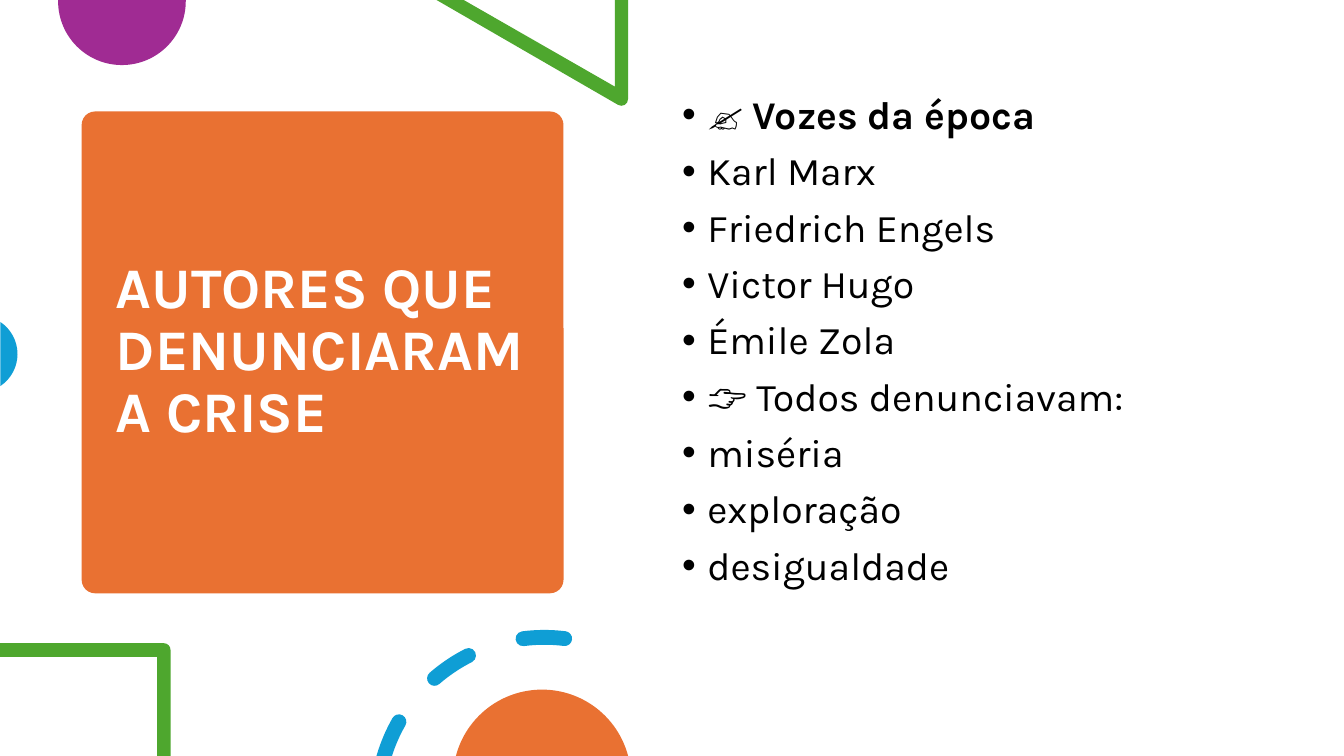
from math import ceil, cos, radians, sin, tan

from lxml.etree import SubElement
from pptx import Presentation
from pptx.dml.color import RGBColor
from pptx.enum.shapes import MSO_SHAPE
from pptx.enum.text import MSO_ANCHOR
from pptx.oxml.ns import qn
from pptx.util import Pt

WIDTH, HEIGHT = 960, 540
FONT = "Karla"
COLORS = {
    "orange": "E97132",
    "purple": "A02B93",
    "green": "4EA72E",
    "blue": "0F9ED5",
    "white": "FFFFFF",
    "black": "000000",
}

TITLE = "AUTORES QUE DENUNCIARAM A CRISE"
HEADING = "✍️ Vozes da época"
VOICES = [
    "Karl Marx",
    "Friedrich Engels",
    "Victor Hugo",
    "Émile Zola",
    "👉 Todos denunciavam:",
    "miséria",
    "exploração",
    "desigualdade",
]

CARD = (58.3, 79.6, 344.2, 344.2)
TITLE_BOX = (75.6, 87.5, 310.3, 328.3)
VOICES_BOX = (480.2, 64.7, 414, 385.2)

RING_CENTER, RING_RADIUS, DASH_HALF = (388.8, 574.8), 119.5, 5.3
ROUND_DASHES = [(229, 243.1), (262.7, 277)]


def lines(*points):
    """Straight outline steps, each holding its end point."""
    return [[point] for point in points]


def arc(center, radius, start, end):
    """A start point, then Bézier steps of three points; degrees run clockwise."""
    count = ceil(abs(end - start) / 90)
    turn = radians(end - start) / count
    handle = 4 / 3 * tan(turn / 4)

    def spot(angle, pull=0):
        return (center[0] + radius * (cos(angle) - pull * sin(angle)),
                center[1] + radius * (sin(angle) + pull * cos(angle)))

    angles = [radians(start) + turn * i for i in range(count + 1)]
    curves = [[spot(a, handle), spot(b, -handle), spot(b)]
              for a, b in zip(angles, angles[1:])]
    return [[spot(angles[0])]] + curves


def ring_dash(outer_start, inner_start, end, round_start=True):
    """Outline of one thick dash on the ring, with a round cap at its end."""
    def cap(angle, turn):
        center = arc(RING_CENTER, RING_RADIUS, angle, angle + 1)[0][0]
        return arc(center, DASH_HALF, turn, turn + 180)[1:]

    outline = arc(RING_CENTER, RING_RADIUS + DASH_HALF, outer_start, end)
    outline += cap(end, end)
    inner = arc(RING_CENTER, RING_RADIUS - DASH_HALF, end, inner_start)
    outline += inner[1:]
    if round_start:
        outline += cap(outer_start, outer_start + 180)
    return outline


DASHES = [ring_dash(196.1, 197.6, 209.7, round_start=False)]
DASHES += [ring_dash(start, start, end) for start, end in ROUND_DASHES]

TRIANGLE = lines((448.6, 0), (439.2, 0), (439.2, 61.9), (331.2, 0), (311.8, 0))
TRIANGLE += arc((443.9, 70.9), 4.7, 120, 0)

CORNER = lines((0, 459.4), (0, 469.2), (112.2, 469.2), (112.2, HEIGHT), (121.8, HEIGHT))
CORNER += arc((117, 464.2), 4.8, 0, -90)

DECORATIONS = [
    ("purple", [lines((132.7, 0), (41.5, 0)) + arc((87.1, 0.9), 45.6, 180, 0)]),
    ("green", [TRIANGLE]),
    ("blue", [arc((-15, 252.9), 27.5, -56.4, 56.4)]),
    ("green", [CORNER]),
    ("blue", DASHES),
    ("orange", [arc((387.2, 556.2), 63.6, 194.7, 345.3)]),
]


def paint(shape, color):
    shape.shadow.inherit = False
    shape.fill.solid()
    shape.fill.fore_color.rgb = RGBColor.from_string(COLORS[color])
    shape.line.fill.background()


def bend(shape, steps):
    """Merge the three segments of each Bézier step into one curve."""
    segments = iter(shape._element.xpath(".//a:lnTo"))
    for step in steps:
        first, *others = [next(segments) for _ in step]
        if others:
            first.tag = qn("a:cubicBezTo")
        for other in others:
            first.append(other[0])
            other.getparent().remove(other)


def add_outline(slide, color, contours):
    contours = [[[(Pt(x), Pt(y)) for x, y in step] for step in contour]
                for contour in contours]
    builder = slide.shapes.build_freeform(*contours[0][0][0], scale=1.0)
    for number, (start, *steps) in enumerate(contours):
        if number:
            builder.move_to(*start[0])
        builder.add_line_segments([point for step in steps for point in step], close=True)
    shape = builder.convert_to_shape()
    bend(shape, [step for contour in contours for step in contour[1:]])
    paint(shape, color)


def add_bullet(paragraph):
    properties = paragraph._p.get_or_add_pPr()
    properties.set("marL", str(Pt(18)))
    properties.set("indent", str(-Pt(18)))
    SubElement(properties, qn("a:buFont"), typeface="Arial")
    SubElement(properties, qn("a:buChar"), char="•")


def write(paragraph, text, size, color="black", bold=False, bullet=False, before=0):
    if bullet:
        add_bullet(paragraph)
    paragraph.line_spacing = 0.9
    paragraph.space_before = Pt(before)
    run = paragraph.add_run()
    run.text = text
    run.font.name = FONT
    run.font.size = Pt(size)
    run.font.bold = bold
    run.font.color.rgb = RGBColor.from_string(COLORS[color])


def add_text_frame(slide, box, anchor):
    frame = slide.shapes.add_textbox(*map(Pt, box)).text_frame
    frame.word_wrap = True
    frame.vertical_anchor = anchor
    return frame


def main():
    presentation = Presentation()
    presentation.slide_width, presentation.slide_height = Pt(WIDTH), Pt(HEIGHT)
    slide = presentation.slides.add_slide(presentation.slide_layouts[6])

    card = slide.shapes.add_shape(MSO_SHAPE.ROUNDED_RECTANGLE, *map(Pt, CARD))
    card.adjustments[0] = 0.028
    paint(card, "orange")

    title = add_text_frame(slide, TITLE_BOX, MSO_ANCHOR.MIDDLE)
    write(title.paragraphs[0], TITLE, 41, color="white", bold=True)

    for color, contours in DECORATIONS:
        add_outline(slide, color, contours)

    voices = add_text_frame(slide, VOICES_BOX, MSO_ANCHOR.TOP)
    write(voices.paragraphs[0], HEADING, 28, bold=True, bullet=True)
    for voice in VOICES:
        write(voices.add_paragraph(), voice, 28, bullet=True, before=10)

    presentation.save("out.pptx")


if __name__ == "__main__":
    main()
